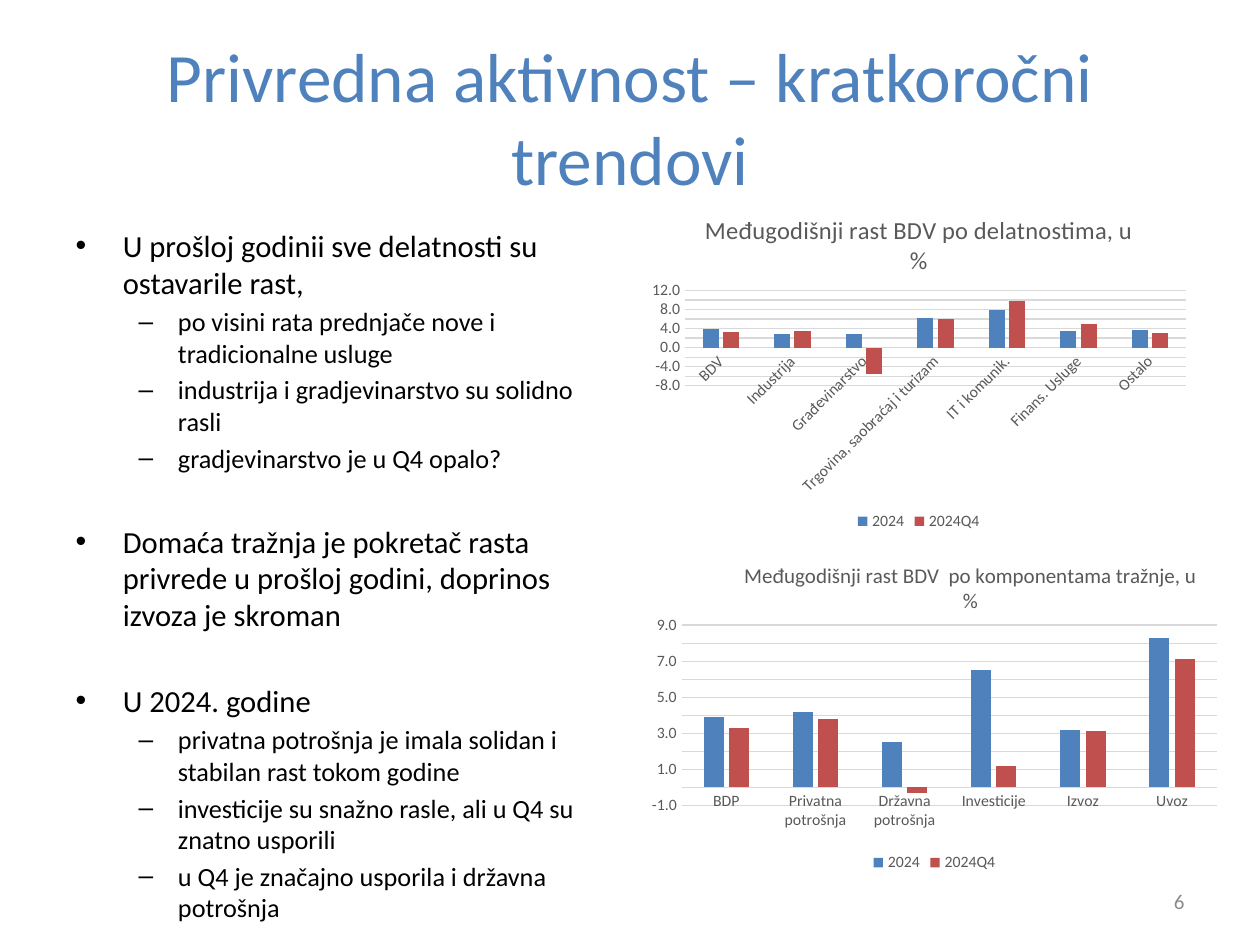
import pptx
import pptx.chart.data
import pptx.dml.color
import pptx.enum.chart
import pptx.enum.text
import pptx.oxml
import pptx.util
from pptx.oxml.ns import qn

Pt = pptx.util.Pt
ALIGN = pptx.enum.text.PP_ALIGN
ANCHOR = pptx.enum.text.MSO_ANCHOR
CHART = pptx.enum.chart
FONT = "Calibri"
COLORS = {"accent": "4F81BD", "second": "C0504D", "text": "000000",
          "label": "595959", "grid": "D9D9D9", "number": "8C8C8C"}


def rgb(name):
    return pptx.dml.color.RGBColor.from_string(COLORS[name])


def format_font(font, size, color):
    font.name, font.size, font.bold = FONT, Pt(size), False
    font.color.rgb = rgb(color)


def write(para, text, size=15, color="text", align=None, before=None):
    """Add text to a paragraph with the given format."""
    span = para.add_run()
    span.text = text
    format_font(span.font, size, color)
    if align is not None:
        para.alignment = align
    if before is not None:
        para.space_before = Pt(before)


def set_layout(parent, position, after=None, inner=False):
    """Place a chart part by fractions of the chart: x, y and perhaps w, h."""
    for old in parent.findall(qn("c:layout")):
        parent.remove(old)
    values = "".join(f'<c:{key} val="{value}"/>' for key, value in zip("xywh", position))
    target = '<c:layoutTarget val="inner"/>' if inner else ""
    layout = pptx.oxml.parse_xml(
        '<c:layout xmlns:c="http://schemas.openxmlformats.org/drawingml/2006/chart">'
        f'<c:manualLayout>{target}<c:xMode val="edge"/><c:yMode val="edge"/>'
        f'{values}</c:manualLayout></c:layout>')
    parent.insert(0 if after is None else parent.index(after) + 1, layout)


class SlideBuilder:
    def __init__(self, deck):
        self.page = deck.slides.add_slide(deck.slide_layouts[1])

    def place(self, box, left, top, width, height):
        box.left, box.top, box.width, box.height = map(Pt, (left, top, width, height))
        frame = box.text_frame
        frame.word_wrap = True
        frame.auto_size = pptx.enum.text.MSO_AUTO_SIZE.NONE
        return frame

    def title(self, text, *area):
        frame = self.place(self.page.shapes.title, *area)
        frame.vertical_anchor = ANCHOR.MIDDLE
        write(frame.paragraphs[0], text, size=39.6, color="accent", align=ALIGN.CENTER)

    def bullets(self, groups, *area):
        frame = self.place(self.page.placeholders[1], *area)
        para = frame.paragraphs[0]
        for number, (heading, points) in enumerate(groups):
            if number:
                para = frame.add_paragraph()
            self.indent(para, 27, 27)
            write(para, heading, size=17.5, before=28 if number else 3.5)
            for point in points:
                para = frame.add_paragraph()
                para.level = 1
                self.indent(para, 58.5, 22.5)
                write(para, point, before=3)

    def indent(self, para, margin, hanging):
        properties = para._p.get_or_add_pPr()
        properties.set("marL", str(Pt(margin)))
        properties.set("indent", str(-Pt(hanging)))

    def page_number(self, text, *area):
        box = self.page.shapes.add_textbox(*map(Pt, area))
        frame = self.place(box, *area)
        frame.vertical_anchor = ANCHOR.MIDDLE
        write(frame.paragraphs[0], text, size=12, color="number", align=ALIGN.RIGHT)

    def column_chart(self, title, categories, series, area, scale, plot_area,
                     title_size, title_position=None, slanted=False):
        data = pptx.chart.data.CategoryChartData(number_format="0.0")
        data.categories = categories
        for name, values in series.items():
            data.add_series(name, values)
        chart = self.page.shapes.add_chart(
            CHART.XL_CHART_TYPE.COLUMN_CLUSTERED, *map(Pt, area), data).chart
        format_font(chart.font, 10, "text")

        # Title and legend
        chart.has_title = True
        write(chart.chart_title.text_frame.paragraphs[0], title,
              size=title_size, color="label")
        chart.chart_title.include_in_layout = False
        if title_position:
            element = chart.chart_title._element
            set_layout(element, title_position, after=element.find(qn("c:tx")))
        chart.has_legend = True
        chart.legend.position = CHART.XL_LEGEND_POSITION.BOTTOM
        chart.legend.include_in_layout = False
        format_font(chart.legend.font, 9, "label")

        # Columns
        plot = chart.plots[0]
        plot.gap_width, plot.overlap = 219, -27
        plot.vary_by_categories = False
        for columns, color in zip(plot.series, ("accent", "second")):
            columns.invert_if_negative = False
            columns.format.fill.solid()
            columns.format.fill.fore_color.rgb = rgb(color)
        set_layout(plot._element.getparent(), plot_area, inner=True)

        # Axes
        category_axis, value_axis = chart.category_axis, chart.value_axis
        for axis in (category_axis, value_axis):
            axis.major_tick_mark = axis.minor_tick_mark = CHART.XL_TICK_MARK.NONE
            format_font(axis.tick_labels.font, 9, "label")
        value_axis.minimum_scale, value_axis.maximum_scale, value_axis.major_unit = scale
        value_axis.tick_labels.number_format = "0.0"
        value_axis.tick_labels.number_format_is_linked = False
        value_axis.format.line.fill.background()
        for line in (category_axis.format.line, value_axis.major_gridlines.format.line):
            line.color.rgb = rgb("grid")
            line.width = Pt(0.75)
        if slanted:
            body = category_axis._element.find(qn("c:txPr")).find(qn("a:bodyPr"))
            body.set("rot", "-2700000")
            body.set("vert", "horz")


def main():
    deck = pptx.Presentation()
    deck.slide_width, deck.slide_height = Pt(720), Pt(540)
    slide = SlideBuilder(deck)

    # Title and list
    slide.title("Privredna aktivnost – kratkoročni trendovi", 36, 21.6, 648, 90)
    slide.bullets([
        ("U prošloj godinii sve delatnosti su ostavarile rast,",
         ["po visini rata prednjače nove i tradicionalne usluge",
          "industrija i gradjevinarstvo su solidno rasli",
          "gradjevinarstvo je u Q4 opalo?"]),
        ("Domaća tražnja je pokretač rasta privrede u prošloj godini, "
         "doprinos izvoza je skroman", []),
        ("U 2024. godine",
         ["privatna potrošnja je imala solidan i stabilan rast tokom godine",
          "investicije su snažno rasle, ali u Q4 su znatno usporili",
          "u Q4 je značajno usporila i državna potrošnja"]),
    ], 36, 126, 318, 356.4)
    slide.page_number("6", 516, 500.4, 168, 28.8)

    # Growth by activity
    slide.column_chart(
        "Međugodišnji rast BDV po delatnostima, u %",
        ["BDV", "Industrija", "Građevinarstvo", "Trgovina, saobraćaj i turizam",
         "IT i komunik.", "Finans. Usluge", "Ostalo"],
        {"2024": [3.9, 2.9, 2.9, 6.3, 8, 3.4, 3.8],
         "2024Q4": [3.2, 3.5, -5.5, 6, 9.8, 5, 3.1]},
        area=(366, 111.6, 318, 194.4), scale=(-8, 12, 2),
        plot_area=(0.08, 0.28, 0.9, 0.28), title_size=14, slanted=True)

    # Growth by demand component
    slide.column_chart(
        "Međugodišnji rast BDV  po komponentama tražnje, u %",
        ["BDP", "Privatna potrošnja", "Državna potrošnja", "Investicije",
         "Izvoz", "Uvoz"],
        {"2024": [3.9, 4.2, 2.5, 6.5, 3.2, 8.3],
         "2024Q4": [3.3, 3.8, -0.3, 1.2, 3.1, 7.1]},
        area=(366, 306.7, 336, 194.4), scale=(-1, 9, 1),
        plot_area=(0.07, 0.26, 0.91, 0.53), title_size=12, title_position=(0.17, 0.06))

    deck.save("out.pptx")


if __name__ == "__main__":
    main()
